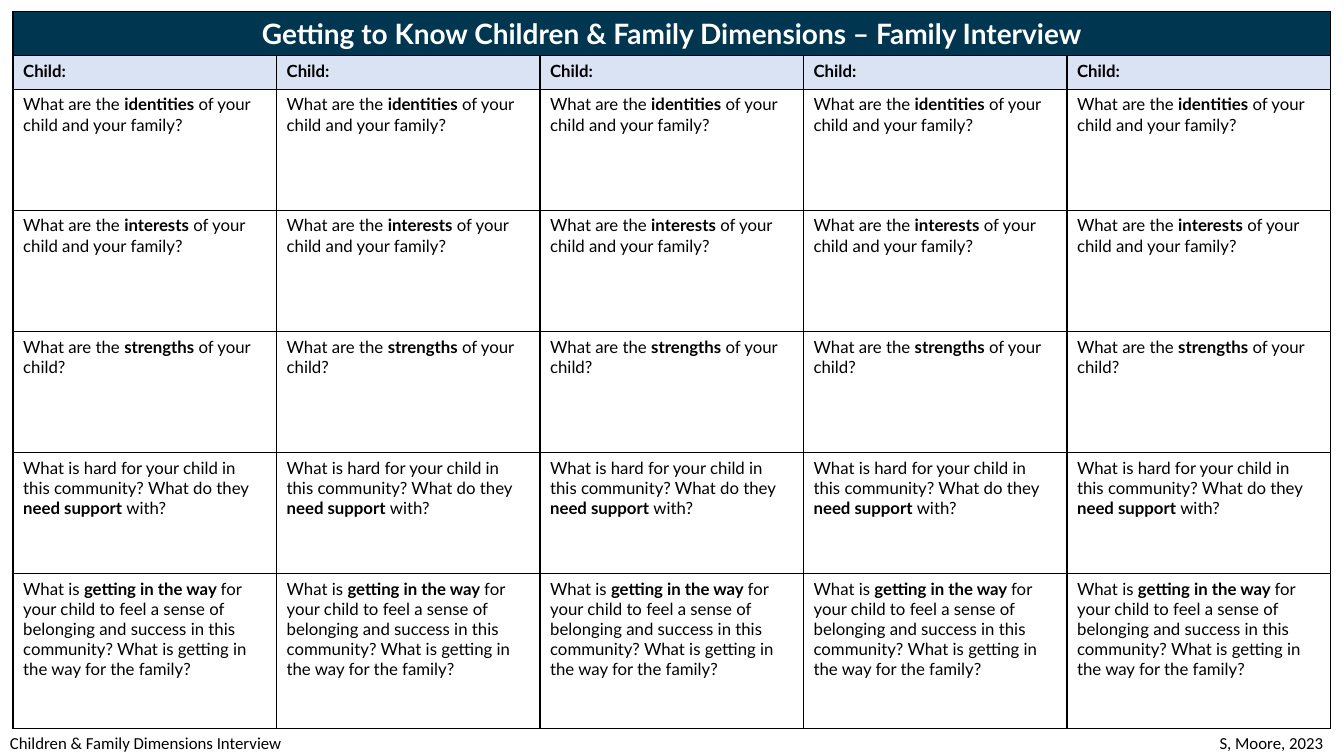
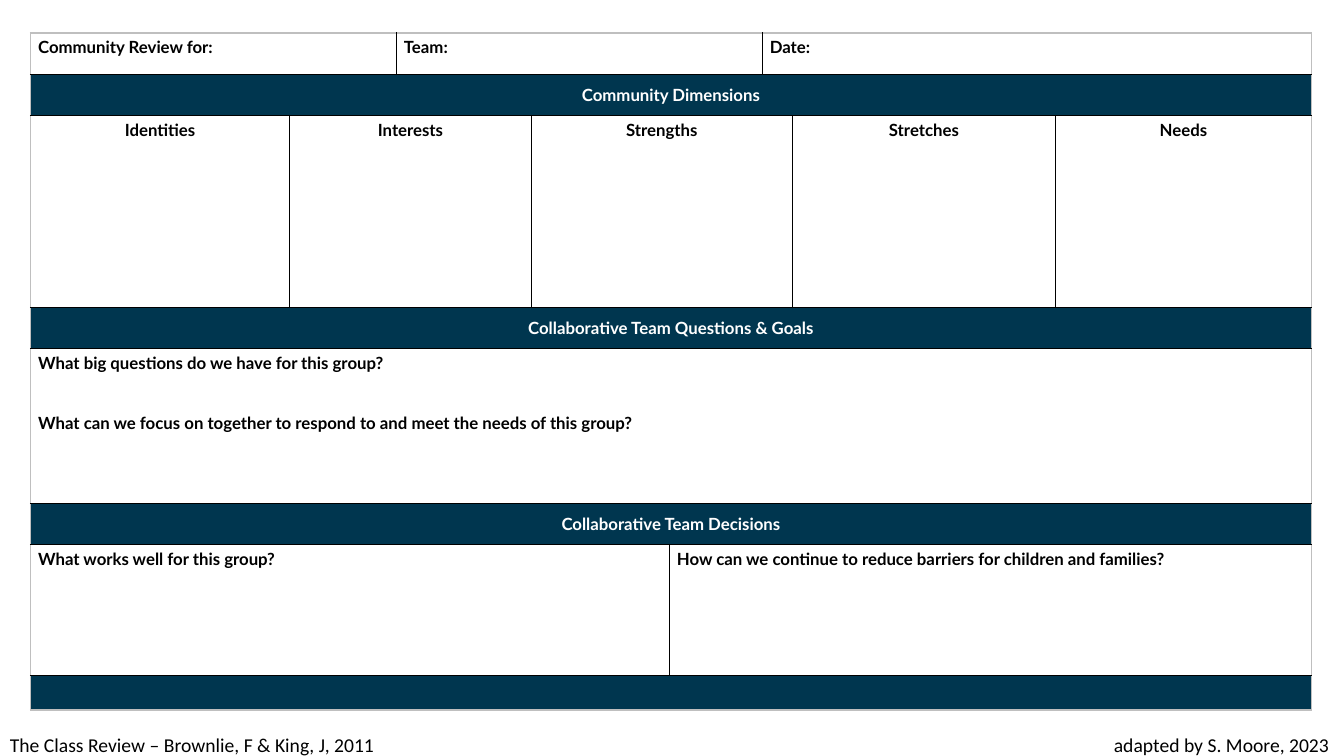
from dataclasses import dataclass
from lxml.etree import SubElement
from pptx import Presentation
from pptx.dml.color import RGBColor
from pptx.enum.text import MSO_ANCHOR, PP_ALIGN
from pptx.oxml.ns import qn
from pptx.util import Cm, Pt


@dataclass(frozen=True)
class Theme:
    """Colours, fonts and type sizes shared by the slides."""
    navy: str = "00364F"
    pale: str = "DAE3F3"
    white: str = "FFFFFF"
    black: str = "000000"
    grey: str = "BFBFBF"
    font: str = "Lato"
    foot_font: str = "Calibri"
    title: int = 20
    body: int = 12
    foot: int = 12
    foot_large: int = 14
    question_gap: int = 29


T = Theme()


@dataclass(frozen=True)
class Entry:
    """A table cell: *starred* words switch between regular and bold."""
    text: str
    span: int = 1
    fill: str = T.white
    color: str = T.black
    size: int = T.body
    align: PP_ALIGN = PP_ALIGN.LEFT
    anchor: MSO_ANCHOR = MSO_ANCHOR.TOP


def band(text, span, size=T.body):
    """Return a dark heading that spans the table."""
    return Entry(text, span, T.navy, T.white, size, PP_ALIGN.CENTER, MSO_ANCHOR.MIDDLE)


def set_font(font, name, size, color, bold=False):
    """Apply the face, size, colour and weight."""
    font.name, font.size, font.bold = name, Pt(size), bold
    font.color.rgb = RGBColor.from_string(color)


def set_border(cell, side, color, width):
    """Add one solid border line to a cell."""
    ln = SubElement(cell._tc.get_or_add_tcPr(), qn(f"a:ln{side}"), w=str(Pt(width)))
    SubElement(SubElement(ln, qn("a:solidFill")), qn("a:srgbClr"), val=color)


def write_entry(cell, entry):
    """Write the paragraphs of an entry into a cell."""
    cell.vertical_anchor = entry.anchor
    tf = cell.text_frame
    for i, line in enumerate(entry.text.split("\n")):
        p = tf.add_paragraph() if i else tf.paragraphs[0]
        p.alignment = entry.align
        if i:
            p.space_before = Pt(T.question_gap)
        for j, part in enumerate(line.split("*")):
            if part:
                r = p.add_run()
                r.text = part
                set_font(r.font, T.font, entry.size, entry.color, j % 2 == 1)


def add_form(s, left, top, widths, heights, rows, edge=T.black, rule=1, inset=None):
    """Add a bordered table whose entries may span columns."""
    tbl = s.shapes.add_table(len(heights), len(widths), Cm(left), Cm(top),
                             Cm(sum(widths)), Cm(sum(heights))).table
    tbl.first_row = tbl.horz_banding = False
    for col, width in zip(tbl.columns, widths):
        col.width = Cm(width)
    last = len(rows) - 1
    for i, (height, entries) in enumerate(zip(heights, rows)):
        tbl.rows[i].height = Cm(height)
        start = 0
        for entry in entries:
            end = start + entry.span
            sides = (
                ("L", start == 0, 1),
                ("R", end == len(widths), 1),
                ("T", i == 0, rule if i > 1 else 1),
                ("B", i == last, rule if 0 < i < last else 1),
            )
            for c in range(start, end):
                cell = tbl.cell(i, c)
                for side, outer, width in sides:
                    set_border(cell, side, edge if outer else T.black, width)
                cell.fill.solid()
                cell.fill.fore_color.rgb = RGBColor.from_string(entry.fill)
                if inset:
                    cell.margin_left = cell.margin_right = Cm(inset[0])
                    cell.margin_top = cell.margin_bottom = Cm(inset[1])
                end_props = cell.text_frame.paragraphs[0]._p.get_or_add_endParaRPr()
                end_props.set("sz", str(T.body * 100))
            if entry.span > 1:
                tbl.cell(i, start).merge(tbl.cell(i, end - 1))
            write_entry(tbl.cell(i, start), entry)
            start = end


def add_footer(s, left_text, right_text, size, tab):
    """Add a footer with its second part set at a right tab."""
    tf = s.shapes.add_textbox(0, Cm(18.34), Cm(33.87), Cm(0.8)).text_frame
    tf.word_wrap = True
    p = tf.paragraphs[0]
    tabs = SubElement(p._p.get_or_add_pPr(), qn("a:tabLst"))
    SubElement(tabs, qn("a:tab"), pos=str(Cm(tab)), algn="r")
    r = p.add_run()
    r.text = f"{left_text}\t{right_text}"
    set_font(r.font, T.foot_font, size, T.black)


def interview_slide(s):
    """Build the family interview grid."""
    children = 5
    questions = (
        "What are the *identities* of your child and your family?",
        "What are the *interests* of your child and your family?",
        "What are the *strengths* of your child?",
        "What is hard for your child in this community? What do they *need support *with?",
        "What is *getting in the way *for your child to feel a sense of belonging and "
        "success in this community? What is getting in the way for the family?",
    )
    title = "*Getting to Know Children & Family Dimensions – Family Interview*"
    rows = [[band(title, children, T.title)],
            [Entry("*Child:*", fill=T.pale)] * children]
    rows += [[Entry(question)] * children for question in questions]
    add_form(s, 0.33, 0.28, [6.64] * children, [1.12, 0.85] + [3.05] * 4 + [3.9],
             rows, rule=0.25)
    add_footer(s, "Children & Family Dimensions Interview", "S, Moore, 2023", T.foot, 33.1)


def review_slide(s):
    """Build the community review form."""
    widths = [6.53, 2.69, 3.4, 3.48, 2.34, 0.76, 6.63, 6.45]
    heights = [1.04, 1.04, 4.83, 1.04, 3.91, 1.04, 3.3, 0.86]
    full = len(widths)
    dimensions = (("Identities", 1), ("Interests", 2), ("Strengths", 3),
                  ("Stretches", 1), ("Needs", 1))
    rows = [
        [Entry("*Community Review for:*", 2), Entry("*Team:*", 3), Entry("*Date:*", 3)],
        [band("*Community Dimensions*", full)],
        [Entry(f"*{name}*", span, align=PP_ALIGN.CENTER) for name, span in dimensions],
        [band("*Collaborative Team Questions & Goals*", full)],
        [Entry("*What big questions do we have for this group?*\n*What can we focus on "
               "together to respond to and meet the needs of this group?*", full)],
        [band("*Collaborative Team Decisions*", full)],
        [Entry("*What works well for this group?*", 4),
         Entry("*How can we continue to reduce barriers for children and families?*", 4)],
        [band("", full)],
    ]
    add_form(s, 0.77, 0.83, widths, heights, rows, edge=T.grey, inset=(0.19, 0.1))
    add_footer(s, "The Class Review – Brownlie, F & King, J, 2011",
               "adapted by S. Moore, 2023", T.foot_large, 33.25)


def main():
    """Build and save the presentation."""
    prs = Presentation()
    prs.slide_width, prs.slide_height = Cm(33.87), Cm(19.05)
    for build in (interview_slide, review_slide):
        build(prs.slides.add_slide(prs.slide_layouts[6]))
    prs.save("out.pptx")


if __name__ == "__main__":
    main()
